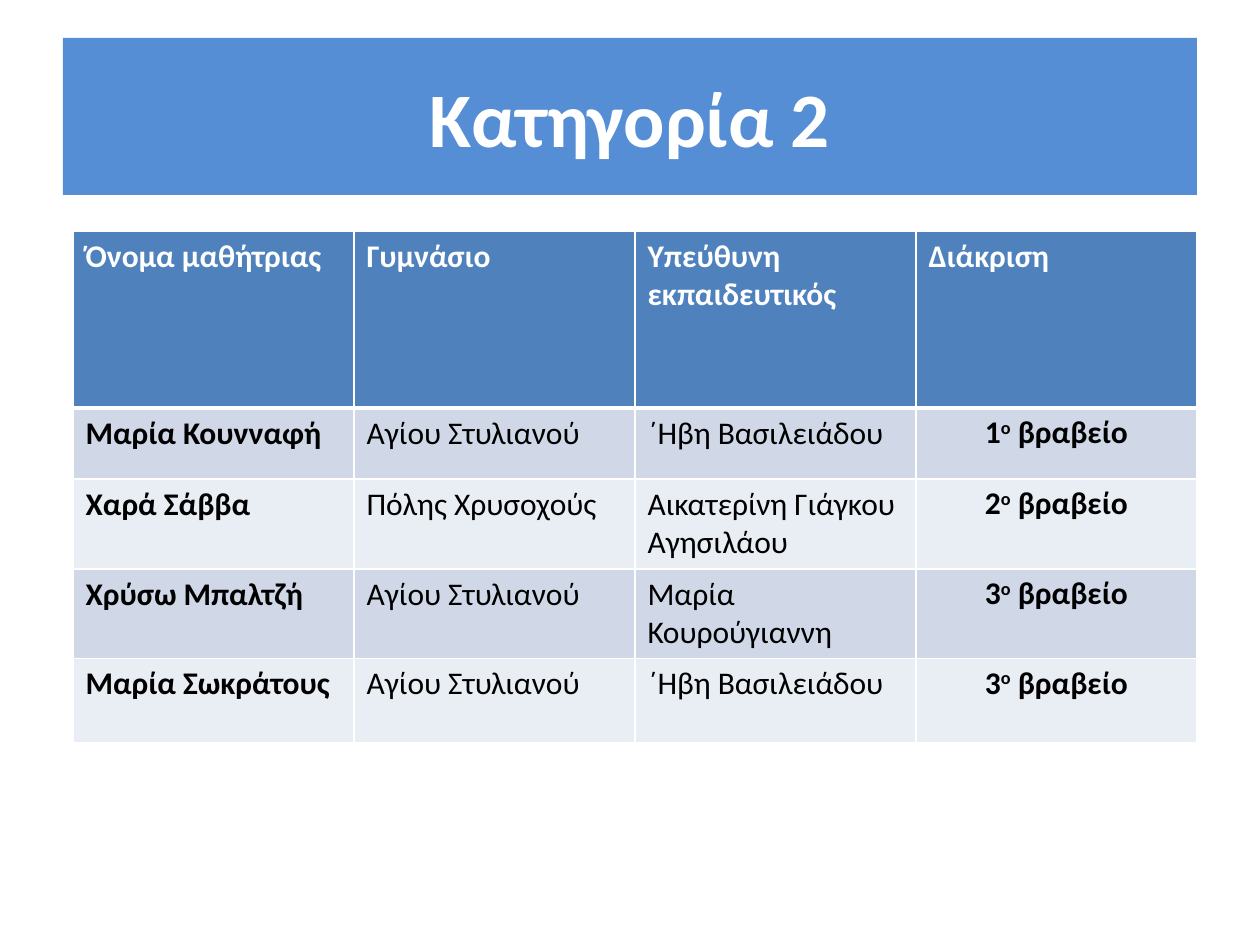
from lxml import etree
from pptx import Presentation
from pptx.dml.color import RGBColor
from pptx.enum.shapes import MSO_SHAPE
from pptx.enum.text import MSO_ANCHOR, PP_ALIGN
from pptx.oxml.ns import qn
from pptx.util import Emu, Pt

RECTANGLE = MSO_SHAPE.RECTANGLE
MIDDLE = MSO_ANCHOR.MIDDLE
CENTER = PP_ALIGN.CENTER

TITLE = "Κατηγορία 2"
HEADERS = ["Όνομα μαθήτριας", "Γυμνάσιο", "Υπεύθυνη εκπαιδευτικός", "Διάκριση"]
AWARDS = [  # student, school, teacher, place
    ("Μαρία Κουνναφή", "Αγίου Στυλιανού", "΄Ηβη Βασιλειάδου", "1"),
    ("Χαρά Σάββα", "Πόλης Χρυσοχούς", "Αικατερίνη Γιάγκου Αγησιλάου", "2"),
    ("Χρύσω Μπαλτζή", "Αγίου Στυλιανού", "Μαρία Κουρούγιαννη", "3"),
    ("Μαρία Σωκράτους", "Αγίου Στυλιανού", "΄Ηβη Βασιλειάδου", "3"),
]
ORDINAL, PRIZE = "ο", " βραβείο"

FONT = "Calibri"
WHITE, BLACK = "FFFFFF", "000000"
TITLE_FILL, HEADER_FILL = "558ED5", "4F81BD"
BANDS = ["D0D8E8", "E9EDF4"]

TITLE_BOX = (63, 38, 1134, 157)
TABLE_LEFT, TABLE_TOP = 73, 231
COLUMN_WIDTH = 281
ROW_HEIGHTS = [177, 71, 90, 89, 84]
PRIZE_MARGIN = 9


def px(length):
    return Emu(round(length * 914400 / 126))


def color(value):
    return RGBColor.from_string(value)


def style_run(span, size, text_color, bold):
    span.font.name = FONT
    span.font.size = Pt(size)
    span.font.bold = bold
    span.font.color.rgb = color(text_color)


def set_borders(cell, top, bottom):
    """Draw white cell borders, with top and bottom widths in points."""
    properties = cell._tc.get_or_add_tcPr()
    for side, width in (("L", 1), ("R", 1), ("T", top), ("B", bottom)):
        line = etree.SubElement(properties, qn(f"a:ln{side}"), w=str(Pt(width)))
        fill = etree.SubElement(line, qn("a:solidFill"))
        etree.SubElement(fill, qn("a:srgbClr"), val=WHITE)


def add_title(page):
    box = page.shapes.add_shape(RECTANGLE, *map(px, TITLE_BOX))
    box.shadow.inherit = False
    box.fill.solid()
    box.fill.fore_color.rgb = color(TITLE_FILL)
    box.line.fill.background()
    box.text_frame.word_wrap = True
    box.text_frame.vertical_anchor = MIDDLE
    para = box.text_frame.paragraphs[0]
    para.text = TITLE
    para.alignment = CENTER
    style_run(para.runs[0], 44, WHITE, True)


def fill_prize(cell, place):
    cell.margin_left = cell.margin_right = px(PRIZE_MARGIN)
    cell.margin_top = cell.margin_bottom = 0
    para = cell.text_frame.paragraphs[0]
    para.alignment = CENTER
    para.line_spacing = 1.15
    for text in (place, ORDINAL, PRIZE):
        span = para.add_run()
        span.text = text
        style_run(span, 18, BLACK, True)
        if text == ORDINAL:
            span.font._element.set("baseline", "30000")


def add_awards_table(page):
    rows = [HEADERS, *AWARDS]
    columns = len(HEADERS)
    table = page.shapes.add_table(
        len(rows), columns, px(TABLE_LEFT), px(TABLE_TOP),
        px(COLUMN_WIDTH * columns), px(sum(ROW_HEIGHTS))).table
    for column in table.columns:
        column.width = px(COLUMN_WIDTH)
    for r, (texts, height) in enumerate(zip(rows, ROW_HEIGHTS)):
        table.rows[r].height = px(height)
        header = r == 0
        for c, text in enumerate(texts):
            cell = table.cell(r, c)
            set_borders(cell, 3 if r == 1 else 1, 3 if header else 1)
            cell.fill.solid()
            cell.fill.fore_color.rgb = color(HEADER_FILL if header else BANDS[(r - 1) % 2])
            if c == columns - 1 and not header:
                fill_prize(cell, text)
                continue
            cell.text_frame.text = text
            span = cell.text_frame.paragraphs[0].runs[0]
            style_run(span, 18, WHITE if header else BLACK, header or c == 0)


def main():
    deck = Presentation()
    deck.slide_width, deck.slide_height = px(1260), px(945)
    page = deck.slides.add_slide(deck.slide_layouts[6])
    add_title(page)
    add_awards_table(page)
    deck.save("out.pptx")


if __name__ == "__main__":
    main()
